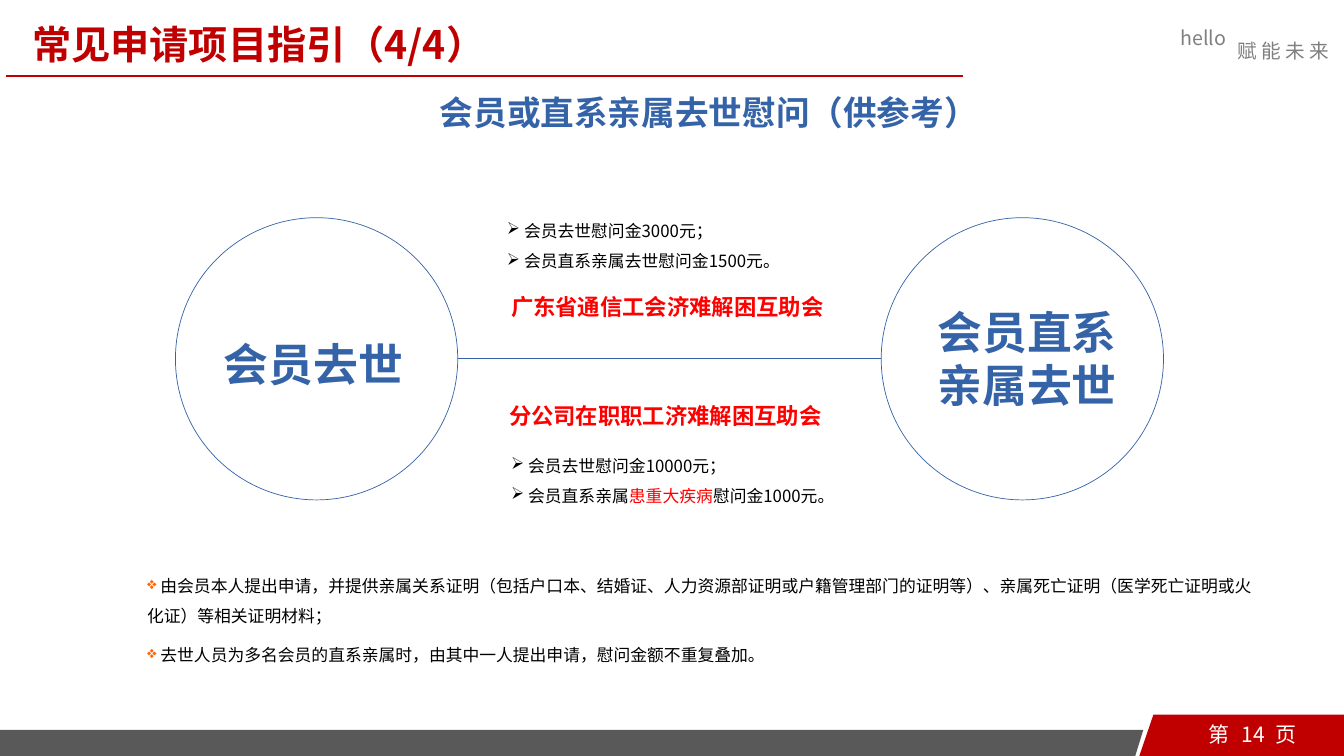
from lxml.etree import SubElement
from pptx import Presentation
from pptx.dml.color import RGBColor
from pptx.enum.shapes import MSO_CONNECTOR, MSO_SHAPE
from pptx.enum.text import MSO_ANCHOR, MSO_AUTO_SIZE, PP_ALIGN
from pptx.oxml.ns import qn
from pptx.util import Inches, Pt

COLORS = {
    "white": "FFFFFF",
    "black": "000000",
    "gray": "595959",
    "motto": "7F7F7F",
    "crimson": "C00000",
    "red": "FF0000",
    "blue": "3563A8",
    "orange": "FF6600",
}


def color(name):
    return RGBColor.from_string(COLORS[name])


class PageBuilder:
    font_name = "Noto Sans CJK SC"

    def __init__(self, deck):
        self.page = deck.slides.add_slide(deck.slide_layouts[5])

    def style(self, para, size, tone, bold=False, align=PP_ALIGN.LEFT, spacing=0):
        para.alignment = align
        font = para.font
        font.name, font.size, font.bold = self.font_name, Pt(size), bold
        font.color.rgb = color(tone)
        properties = para._p.pPr.find(qn("a:defRPr"))
        SubElement(properties, qn("a:ea"), typeface=self.font_name)
        if spacing:
            properties.set("spc", str(spacing * 100))

    def fill_frame(self, frame, lines, size, tone, wrap=True, **style):
        frame.word_wrap = wrap
        frame.auto_size = MSO_AUTO_SIZE.NONE
        frame.vertical_anchor = MSO_ANCHOR.TOP
        for index, line in enumerate(lines):
            para = frame.add_paragraph() if index else frame.paragraphs[0]
            para.add_run().text = line
            self.style(para, size, tone, **style)

    def title(self, text, left, top, width, height, **style):
        box = self.page.shapes.title
        box.left, box.top = Inches(left), Inches(top)
        box.width, box.height = Inches(width), Inches(height)
        self.fill_frame(box.text_frame, [text], **style)

    def text(self, lines, left, top, width, height, **style):
        box = self.page.shapes.add_textbox(
            Inches(left), Inches(top), Inches(width), Inches(height))
        self.fill_frame(box.text_frame, lines, **style)

    def bullets(self, items, left, top, width, height, mark, mark_tone="black", gap=0):
        """Each item is a list of (text, tone) spans."""
        box = self.page.shapes.add_textbox(
            Inches(left), Inches(top), Inches(width), Inches(height))
        frame = box.text_frame
        frame.word_wrap = True
        for index, spans in enumerate(items):
            para = frame.add_paragraph() if index else frame.paragraphs[0]
            properties = para._p.get_or_add_pPr()
            properties.set("marL", "0")
            properties.set("indent", "0")
            tint = SubElement(properties, qn("a:buClr"))
            SubElement(tint, qn("a:srgbClr"), val=COLORS[mark_tone])
            SubElement(properties, qn("a:buChar"), char=mark)
            para.line_spacing = 1.5
            if index and gap:
                para.space_before = Pt(gap)
            self.style(para, 12, "black")
            for text, tone in spans:
                span = para.add_run()
                span.text = text
                if tone != "black":
                    span.font.color.rgb = color(tone)

    def polygon(self, points, tone):
        corners = [(Inches(x), Inches(y)) for x, y in points]
        builder = self.page.shapes.build_freeform(*corners[0], scale=1.0)
        builder.add_line_segments(corners[1:], close=True)
        shape = builder.convert_to_shape()
        shape.shadow.inherit = False
        shape.fill.solid()
        shape.fill.fore_color.rgb = color(tone)
        shape.line.fill.background()

    def circle(self, left, top, diameter):
        shape = self.page.shapes.add_shape(
            MSO_SHAPE.OVAL, Inches(left), Inches(top), Inches(diameter), Inches(diameter))
        shape.shadow.inherit = False
        shape.fill.background()
        shape.line.color.rgb = color("blue")
        shape.line.width = Pt(0.5)

    def rule(self, start, end, y, tone, width):
        line = self.page.shapes.add_connector(
            MSO_CONNECTOR.STRAIGHT, Inches(start), Inches(y), Inches(end), Inches(y))
        line.line.color.rgb = color(tone)
        line.line.width = Pt(width)
        SubElement(line._element.spPr, qn("a:effectLst"))


def main():
    deck = Presentation()
    deck.slide_width, deck.slide_height = Inches(13.33), Inches(7.5)
    builder = PageBuilder(deck)

    builder.polygon([(0, 7.5), (11.26, 7.5), (11.34, 7.24), (0, 7.24)], "gray")
    builder.polygon([(11.44, 7.09), (11.3, 7.5), (13.33, 7.5), (13.33, 7.09)], "crimson")
    for text, center in (("第", 12.09), ("14", 12.43), ("页", 12.75)):
        builder.text([text], center - 0.25, 7.11, 0.5, 0.37,
                     size=15, tone="white", align=PP_ALIGN.CENTER)
    builder.text(["hello"], 11.61, 0.21, 0.66, 0.34, size=14, tone="motto", wrap=False)
    builder.text(["赋能未来"], 12.18, 0.34, 1.16, 0.34,
                 size=14, tone="motto", wrap=False, spacing=3)

    builder.rule(0.06, 9.55, 0.75, "crimson", 1.5)
    builder.title("常见申请项目指引（4/4）", 0.22, 0.15, 9.47, 0.57,
                  size=28, tone="crimson", bold=True)
    builder.text(["会员或直系亲属去世慰问（供参考）"], 4.02, 0.86, 6.02, 0.5,
                 size=24, tone="blue", bold=True, align=PP_ALIGN.CENTER)

    diameter, circle_top = 2.8, 2.16
    left_circle, right_circle = 1.74, 8.74
    for left in (left_circle, right_circle):
        builder.circle(left, circle_top, diameter)
    builder.rule(left_circle + diameter, right_circle, circle_top + diameter / 2, "blue", 0.5)
    for lines, left, top, height in (
        (["会员去世"], 2.12, 3.29, 0.64),
        (["会员直系", "亲属去世"], 9.2, 2.97, 1.18),
    ):
        builder.text(lines, left, top, 2, height, size=32, tone="blue", bold=True, wrap=False)

    for fund, left, top in (
        ("广东省通信工会济难解困互助会", 4.97, 2.86),
        ("分公司在职职工济难解困互助会", 4.95, 3.94),
    ):
        builder.text([fund], left, top, 3.72, 0.37, size=16, tone="red", bold=True)

    builder.bullets([
        [(" 会员去世慰问金3000元；", "black")],
        [(" 会员直系亲属去世慰问金1500元。", "black")],
    ], 4.93, 2.04, 3.61, 0.71, mark="➢")
    builder.bullets([
        [(" 会员去世慰问金10000元；", "black")],
        [(" 会员直系亲属", "black"), ("患重大疾病", "red"), ("慰问金1000元。", "black")],
    ], 4.97, 4.37, 3.61, 0.66, mark="➢")
    builder.bullets([
        [(" 由会员本人提出申请，并提供亲属关系证明（包括户口本、结婚证、人力资源部证明或"
          "户籍管理部门的证明等）、亲属死亡证明（医学死亡证明或火化证）等相关证明材料；", "black")],
        [(" 去世人员为多名会员的直系亲属时，由其中一人提出申请，慰问金额不重复叠加。", "black")],
    ], 1.36, 5.56, 11.19, 1.11, mark="❖", mark_tone="orange", gap=6)

    deck.save("out.pptx")


if __name__ == "__main__":
    main()
